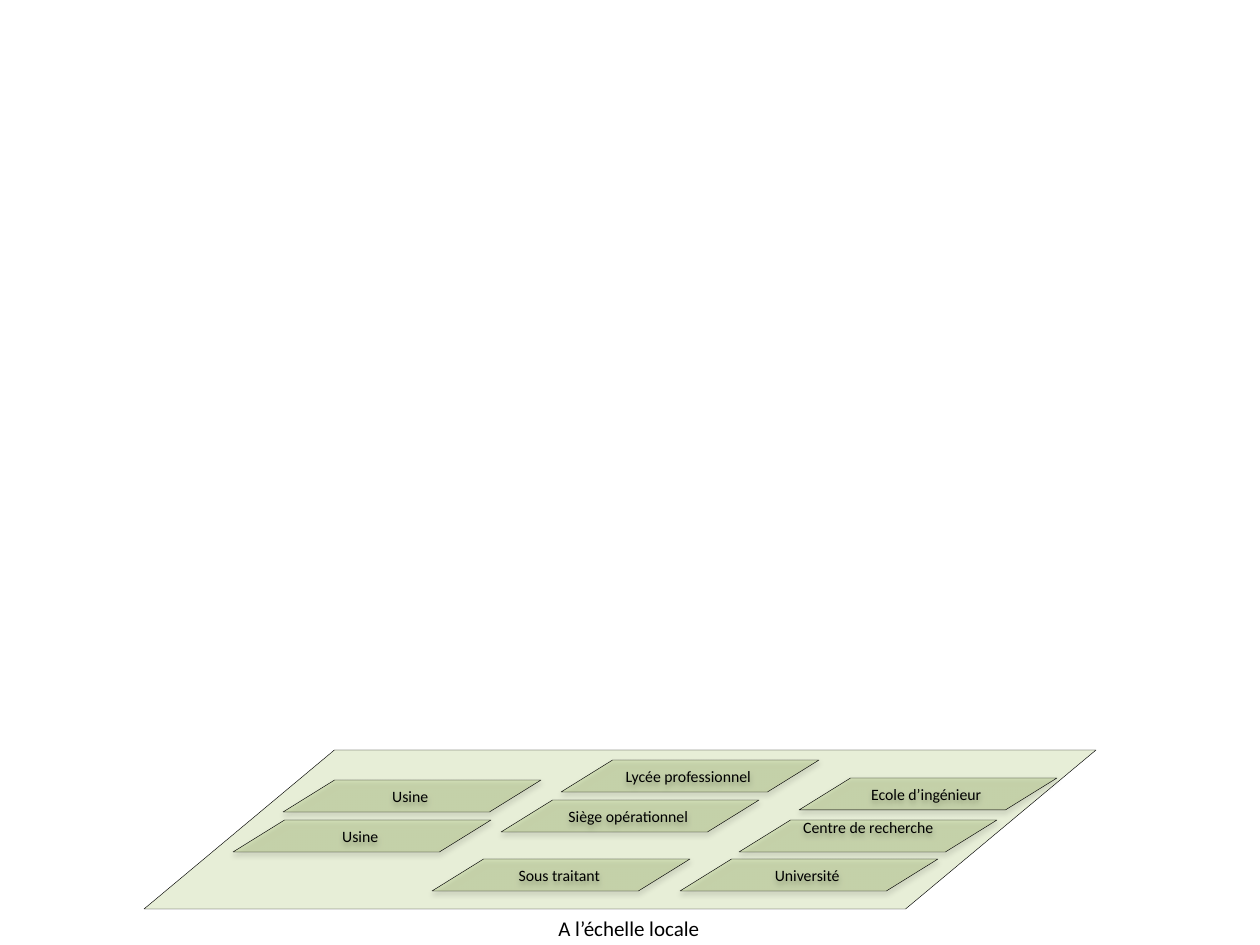
from lxml import etree
from pptx import Presentation, util as u
from pptx.dml.color import RGBColor
from pptx.enum import shapes, text
from pptx.oxml import ns

GREEN = RGBColor(0x9B, 0xBB, 0x59)
BLACK = RGBColor(0x00, 0x00, 0x00)
EMU_PER_PX = 914400 / 126
LABEL_WIDTH, LABEL_HEIGHT = 258, 32


def px(length):
    return u.Emu(round(length * EMU_PER_PX))


def add_xml(parent, tag, **attributes):
    return etree.SubElement(parent, ns.qn(tag), attributes)


class Diagram:
    font = "Calibri"
    opacity = "24000"

    def __init__(self, slide):
        self.slide = slide

    def format_text(self, frame, content, size):
        frame.text = content
        font = frame.paragraphs[0].runs[0].font
        font.name, font.size = self.font, u.Pt(size)
        font.color.rgb = BLACK

    def parallelogram(self, left, top, width, height):
        shape = self.slide.shapes.add_shape(
            shapes.MSO_SHAPE.FLOWCHART_DATA,
            px(left), px(top), px(width), px(height))
        shape.shadow.inherit = False
        shape.fill.solid()
        shape.fill.fore_color.rgb = GREEN
        color = shape.fill._xPr.find(".//" + ns.qn("a:srgbClr"))
        add_xml(color, "a:alpha", val=self.opacity)
        shape.line.color.rgb = BLACK
        shape.line.width = u.Pt(0.25)
        return shape

    def drop_shadow(self, shape):
        effects = shape._element.spPr.find(ns.qn("a:effectLst"))
        shadow = add_xml(effects, "a:outerShdw", blurRad="40000", dist="20000",
                         dir="5400000", rotWithShape="0")
        color = add_xml(shadow, "a:srgbClr", val=str(BLACK))
        add_xml(color, "a:alpha", val="38000")

    def label(self, content, left, top, right_inset=16, bottom_inset=6):
        shape = self.parallelogram(left, top, LABEL_WIDTH, LABEL_HEIGHT)
        self.drop_shadow(shape)
        frame = shape.text_frame
        self.format_text(frame, content, 9)
        frame.word_wrap = False
        frame.margin_right, frame.margin_bottom = px(right_inset), px(bottom_inset)
        frame.vertical_anchor = text.MSO_ANCHOR.MIDDLE
        frame.paragraphs[0].alignment = text.PP_ALIGN.CENTER

    def caption(self, content, left, top, width, height):
        box = self.slide.shapes.add_textbox(px(left), px(top), px(width), px(height))
        self.format_text(box.text_frame, content, 12)
        box.text_frame.word_wrap = False
        box.text_frame.auto_size = text.MSO_AUTO_SIZE.SHAPE_TO_FIT_TEXT


def main():
    presentation = Presentation()
    presentation.slide_width, presentation.slide_height = px(1260), px(945)
    diagram = Diagram(presentation.slides.add_slide(presentation.slide_layouts[6]))

    # Local ground plane
    diagram.parallelogram(144, 750, 952, 159)

    # Local sites; the research centre's text sits higher than the others
    diagram.label("Centre de recherche", 739, 820, right_inset=12, bottom_inset=24)
    for content, left, top in (
        ("Siège opérationnel", 501, 800),
        ("Lycée professionnel", 561, 760),
        ("Usine", 233, 820),
        ("Sous traitant", 432, 859),
        ("Université", 680, 859),
        ("Usine", 283, 780),
        ("Ecole d’ingénieur", 799, 778),
    ):
        diagram.label(content, left, top)

    # Scale caption
    diagram.caption("A l’échelle locale", 546, 909, 174, 38)

    presentation.save("out.pptx")


if __name__ == "__main__":
    main()
